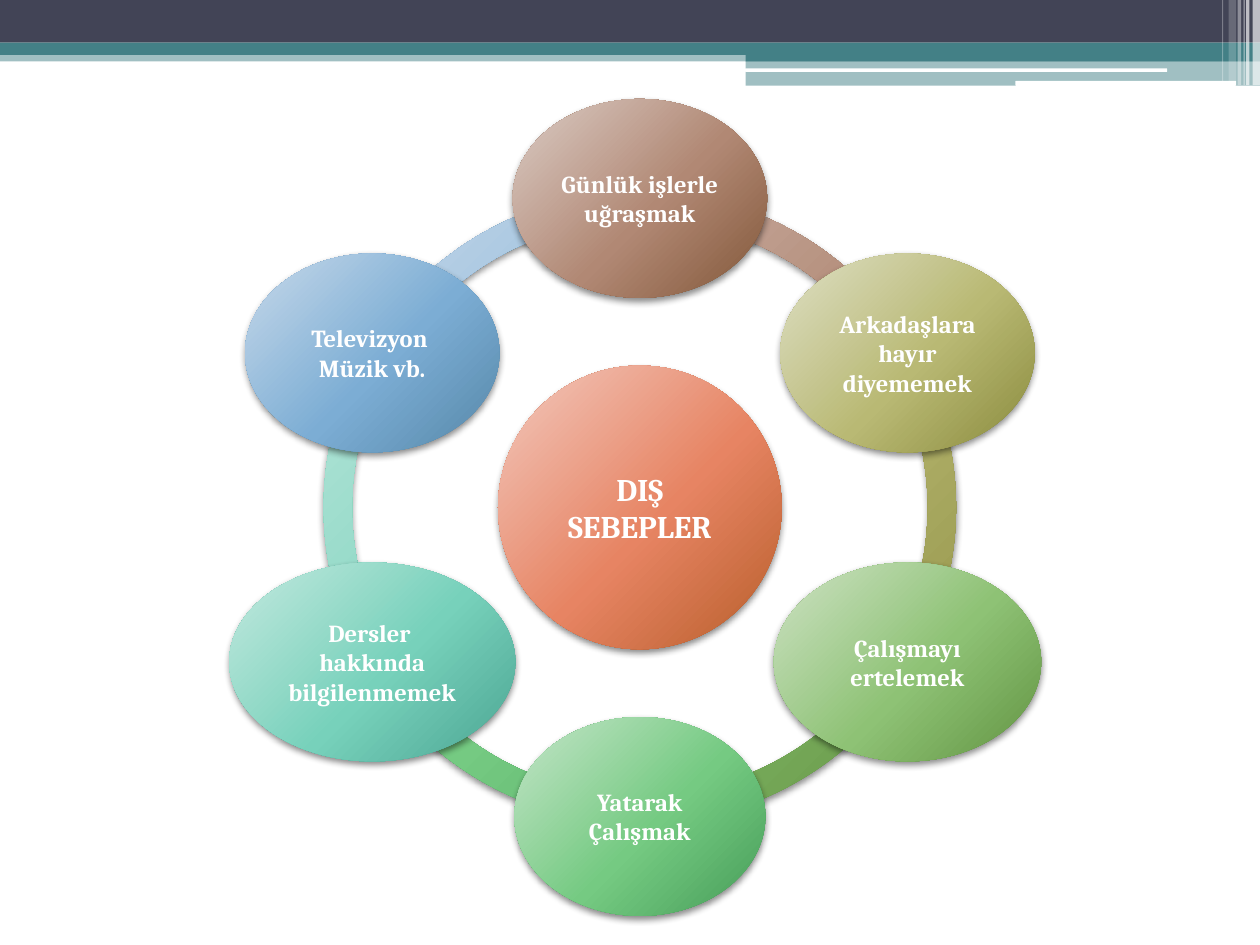
from dataclasses import dataclass
from math import cos, radians, sin

from lxml import etree
from pptx import Presentation
from pptx.dml.color import RGBColor
from pptx.enum import shapes, text
from pptx.oxml import parse_xml
from pptx.oxml.ns import nsdecls, qn
from pptx.util import Cm, Pt

WHITE = RGBColor(0xFF, 0xFF, 0xFF)
NAVY = RGBColor(0x42, 0x44, 0x56)
TEAL = RGBColor(0x43, 0x80, 0x86)


@dataclass(frozen=True)
class Palette:
    light: RGBColor
    middle: RGBColor
    dark: RGBColor


@dataclass(frozen=True)
class Band:
    left: float
    top: float
    width: float
    height: float
    color: RGBColor
    opacity: int = 100
    rounded: bool = False


@dataclass(frozen=True)
class Cause:
    lines: tuple[str, ...]
    palette: Palette
    width: float = 5.13


def palette(light: str, middle: str, dark: str) -> Palette:
    return Palette(*map(RGBColor.from_string, (light, middle, dark)))


ORANGE = palette("F2C9BF", "E78463", "B75E2A")
BROWN = palette("DBCCC6", "B18874", "825739")
OLIVE = palette("DEDFC6", "B9B974", "8A8B3D")
LEAF = palette("CEE2C5", "8EC275", "629442")
GREEN = palette("C5E5C9", "75CA82", "469D58")
MINT = palette("C5E9DF", "77D1BB", "4CA593")
BLUE = palette("C7D9EA", "7CADD4", "5688A9")

BANDS = [
    Band(0, 1.01, 25.4, 0.23, TEAL, 50),
    Band(0, 0, 25.4, 0.86, NAVY),
    Band(0, 0.86, 25.4, 0.25, TEAL),
    Band(15.03, 0.99, 10.37, 0.25, TEAL),
    Band(15.03, 1.23, 10.37, 0.5, TEAL, 50),
    Band(15.02, 1.38, 8.51, 0.07, WHITE, rounded=True),
    Band(20.47, 1.63, 4.45, 0.1, WHITE, rounded=True),
    Band(25.25, 0, 0.15, 1.72, WHITE, 65),
    Band(25.12, 0, 0.07, 1.72, WHITE, 65),
    Band(25.07, 0, 0.02, 1.72, WHITE, 60),
    Band(24.95, 0, 0.07, 1.72, WHITE, 40),
    Band(24.77, 0, 0.15, 1.63, WHITE, 20),
    Band(24.64, 0, 0.02, 1.63, WHITE, 30),
]

CAUSES = [
    Cause(("Günlük işlerle", "uğraşmak"), BROWN),
    Cause(("Arkadaşlara", "hayır", "diyememek"), OLIVE),
    Cause(("Çalışmayı", "ertelemek"), LEAF, 5.39),
    Cause(("Yatarak Çalışmak",), GREEN, 5.06),
    Cause(("Dersler ", "hakkında", "bilgilenmemek"), MINT, 5.77),
    Cause(("Televizyon ", "Müzik vb."), BLUE),
]

CENTER_X, CENTER_Y = 12.9, 10.23
RING_RADIUS = 6.23
RING_SIZE = 12.75
RING_THICKNESS = 0.045
HUB_SIZE = 5.72
CAUSE_HEIGHT = 4.01
STEP = 360 / len(CAUSES)


def draw_band(slide, band: Band) -> None:
    kind = shapes.MSO_SHAPE.ROUNDED_RECTANGLE if band.rounded else shapes.MSO_SHAPE.RECTANGLE
    shape = slide.shapes.add_shape(
        kind, Cm(band.left), Cm(band.top), Cm(band.width), Cm(band.height))
    shape.shadow.inherit = False
    shape.line.fill.background()
    shape.fill.solid()
    shape.fill.fore_color.rgb = band.color
    if band.opacity < 100:
        color = shape._element.spPr.find(qn("a:solidFill"))[0]
        etree.SubElement(color, qn("a:alpha"), val=str(band.opacity * 1000))


def add_glossy(slide, kind, x: float, y: float, width: float, height: float, colors: Palette):
    shape = slide.shapes.add_shape(
        kind, Cm(x - width / 2), Cm(y - height / 2), Cm(width), Cm(height))
    properties = shape._element.spPr
    stops = "".join(
        f'<a:gs pos="{position}"><a:srgbClr val="{color}"/></a:gs>'
        for position, color in ((0, colors.light), (55000, colors.middle), (100000, colors.dark)))
    properties.append(parse_xml(
        f'<a:gradFill {nsdecls("a")} rotWithShape="1"><a:gsLst>{stops}</a:gsLst>'
        '<a:path path="circle"><a:fillToRect l="-40000" t="-90000" r="140000" b="190000"/>'
        '</a:path></a:gradFill>'))
    shape.line.fill.background()
    shape.shadow.inherit = False
    properties.find(qn("a:effectLst")).append(parse_xml(
        f'<a:outerShdw {nsdecls("a")} blurRad="{Pt(4)}" dist="{Pt(2)}" dir="5400000" '
        'rotWithShape="0"><a:srgbClr val="000000"><a:alpha val="45000"/></a:srgbClr>'
        '</a:outerShdw>'))
    return shape


def draw_arc(slide, index: int, colors: Palette) -> None:
    shape = add_glossy(
        slide, shapes.MSO_SHAPE.BLOCK_ARC, CENTER_X, CENTER_Y, RING_SIZE, RING_SIZE, colors)
    start = (270 + STEP * index) % 360
    end = (start + STEP) % 360
    shape.adjustments[0] = start * 0.6
    shape.adjustments[1] = end * 0.6
    shape.adjustments[2] = RING_THICKNESS


def draw_bubble(slide, x: float, y: float, width: float, height: float,
                colors: Palette, lines: tuple[str, ...], size: int, inset: float) -> None:
    shape = add_glossy(slide, shapes.MSO_SHAPE.OVAL, x, y, width, height, colors)
    frame = shape.text_frame
    frame.word_wrap = True
    frame.vertical_anchor = text.MSO_ANCHOR.MIDDLE
    frame.margin_left = frame.margin_right = Cm(inset)
    frame.margin_top = frame.margin_bottom = Cm(inset)
    frame.text = "\n".join(lines)
    for paragraph in frame.paragraphs:
        paragraph.alignment = text.PP_ALIGN.CENTER
        paragraph.font.name = "Cambria"
        paragraph.font.size = Pt(size)
        paragraph.font.bold = True
        paragraph.font.color.rgb = WHITE


def main() -> None:
    presentation = Presentation()
    presentation.slide_width = Cm(25.4)
    presentation.slide_height = Cm(19.05)
    slide = presentation.slides.add_slide(presentation.slide_layouts[6])
    for band in BANDS:
        draw_band(slide, band)
    for index, cause in reversed(list(enumerate(CAUSES))):
        draw_arc(slide, index, cause.palette)
    draw_bubble(slide, CENTER_X, CENTER_Y, HUB_SIZE, HUB_SIZE,
                ORANGE, ("DIŞ SEBEPLER",), 18, 0.08)
    for index, cause in enumerate(CAUSES):
        angle = radians(STEP * index)
        draw_bubble(slide, CENTER_X + RING_RADIUS * sin(angle),
                    CENTER_Y - RING_RADIUS * cos(angle), cause.width, CAUSE_HEIGHT,
                    cause.palette, cause.lines, 14, 0.05)
    presentation.save("out.pptx")


if __name__ == "__main__":
    main()
